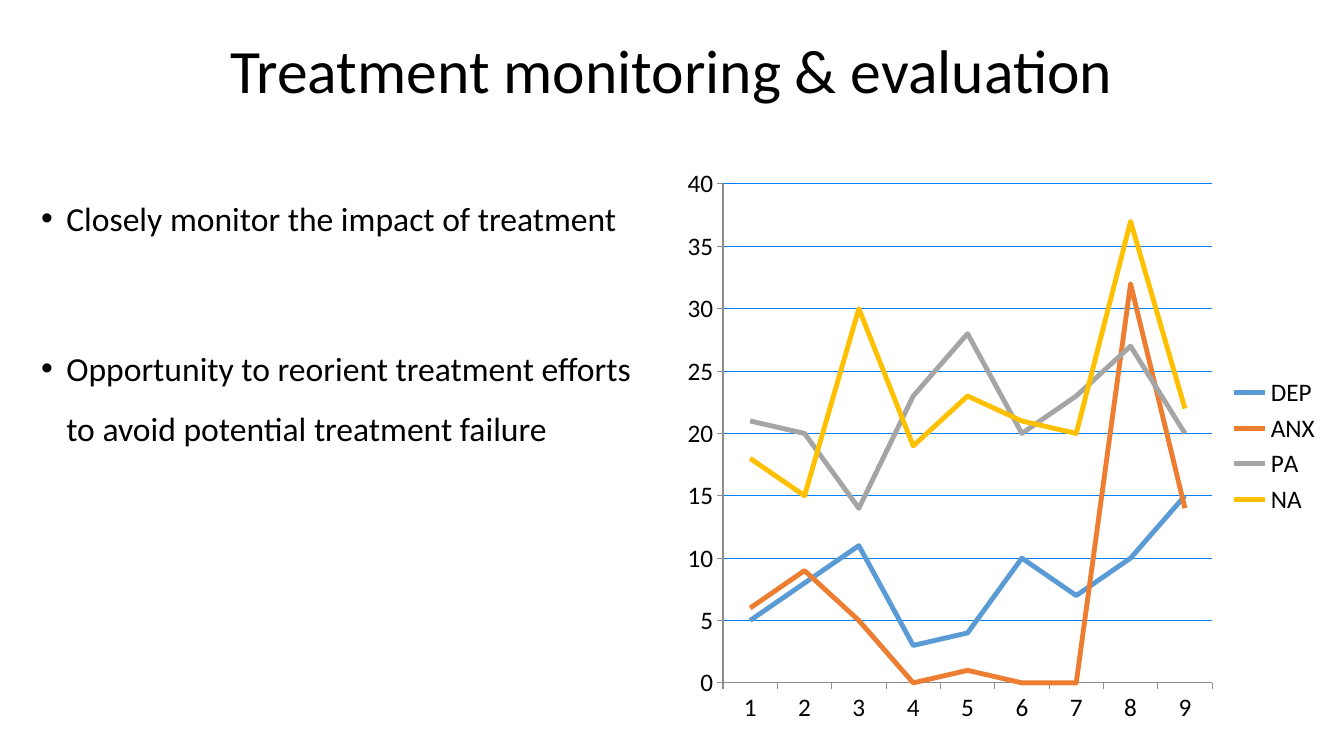
import pptx
import pptx.chart.data
import pptx.dml.color
import pptx.enum.chart
import pptx.enum.text
import pptx.oxml
import pptx.oxml.ns
import pptx.util

Pt = pptx.util.Pt
FONT = "Calibri"


def rgb(value):
    return pptx.dml.color.RGBColor.from_string(value)


def add_text(left, top, width, height, lines, size):
    tf = s.shapes.add_textbox(Pt(left), Pt(top), Pt(width), Pt(height)).text_frame
    tf.word_wrap = True
    tf.text = "\n".join(lines)
    for p in tf.paragraphs:
        for r in p.runs:
            r.font.name = FONT
            r.font.size = Pt(size)
            r.font.color.rgb = rgb("000000")
    return tf


prs = pptx.Presentation()
prs.slide_width = Pt(960)
prs.slide_height = Pt(540)
s = prs.slides.add_slide(prs.slide_layouts[6])

tf = add_text(66, 0, 828, 104.4, ["Treatment monitoring & evaluation"], 44)
tf.vertical_anchor = pptx.enum.text.MSO_ANCHOR.MIDDLE
p = tf.paragraphs[0]
p.alignment = pptx.enum.text.PP_ALIGN.CENTER
p.line_spacing = 0.9

bullets = [
    "Closely monitor the impact of treatment",
    "Opportunity to reorient treatment efforts to avoid potential treatment failure",
]
tf = add_text(22.3, 123.1, 439.2, 379.4, bullets, 24)
for p, space in zip(tf.paragraphs, (10, 64)):
    p.line_spacing = 1.5
    p.space_before = Pt(space)
    pPr = p._p.get_or_add_pPr()
    pPr.set("marL", str(Pt(18)))
    pPr.set("indent", str(Pt(-18)))
    ns = pptx.oxml.ns.nsdecls("a")
    pPr.append(pptx.oxml.parse_xml(f'<a:buFont {ns} typeface="Arial"/>'))
    pPr.append(pptx.oxml.parse_xml(f'<a:buChar {ns} char="•"/>'))

scores = [
    ("DEP", "5B9BD5", (5, 8, 11, 3, 4, 10, 7, 10, 15)),
    ("ANX", "ED7D31", (6, 9, 5, 0, 1, 0, 0, 32, 14)),
    ("PA", "A5A5A5", (21, 20, 14, 23, 28, 20, 23, 27, 20)),
    ("NA", "FFC000", (18, 15, 30, 19, 23, 21, 20, 37, 22)),
]
data = pptx.chart.data.CategoryChartData()
data.categories = [str(n) for n in range(1, 10)]
for name, color, values in scores:
    data.add_series(name, values)
chart = s.shapes.add_chart(
    pptx.enum.chart.XL_CHART_TYPE.LINE,
    Pt(481.7), Pt(112.3), Pt(469.4), Pt(412.6), data,
).chart
chart.has_title = False
chart.font.name = FONT
chart.font.size = Pt(18)
chart.font.color.rgb = rgb("000000")
chart.has_legend = True
chart.legend.position = pptx.enum.chart.XL_LEGEND_POSITION.RIGHT
chart.legend.include_in_layout = False

plot = chart.plots[0]
plot.vary_by_categories = False
for series, (name, color, values) in zip(plot.series, scores):
    series.smooth = False
    series.marker.style = pptx.enum.chart.XL_MARKER_STYLE.NONE
    series.format.line.width = Pt(3.5)
    series.format.line.color.rgb = rgb(color)

for axis in (chart.category_axis, chart.value_axis):
    axis.major_tick_mark = pptx.enum.chart.XL_TICK_MARK.OUTSIDE
    axis.minor_tick_mark = pptx.enum.chart.XL_TICK_MARK.NONE
    axis.format.line.width = Pt(0.75)
    axis.format.line.color.rgb = rgb("8C8C8C")
chart.value_axis.minimum_scale = 0
chart.value_axis.maximum_scale = 40
chart.value_axis.major_unit = 5
grid = chart.value_axis.major_gridlines.format.line
grid.width = Pt(0.75)
grid.color.rgb = rgb("0080F3")

prs.save("out.pptx")
